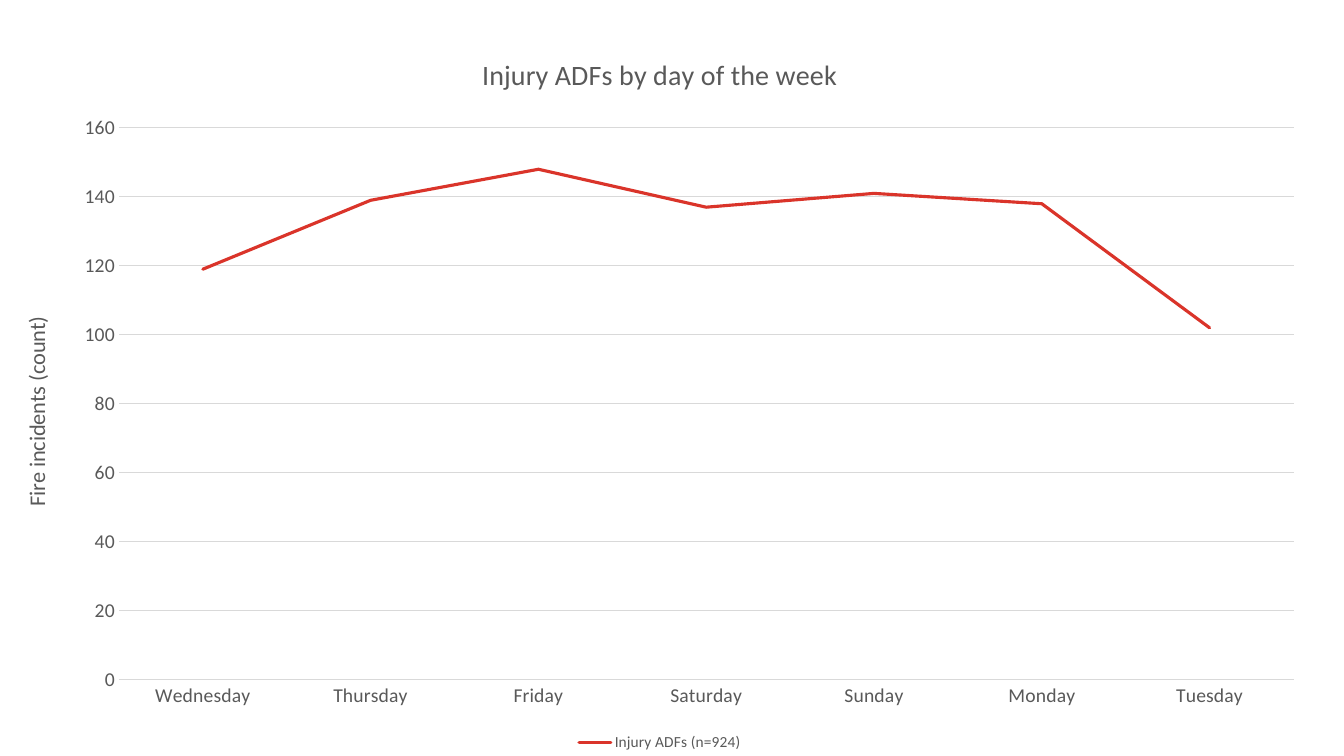
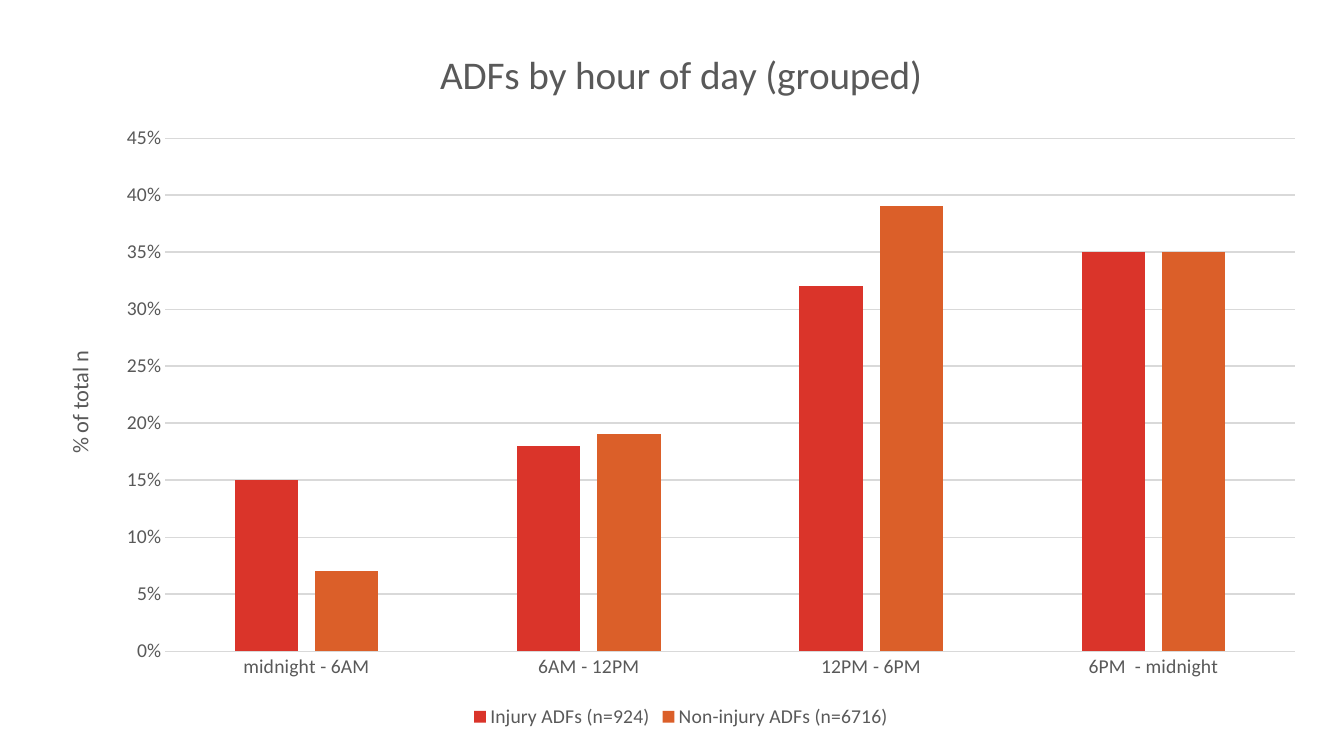
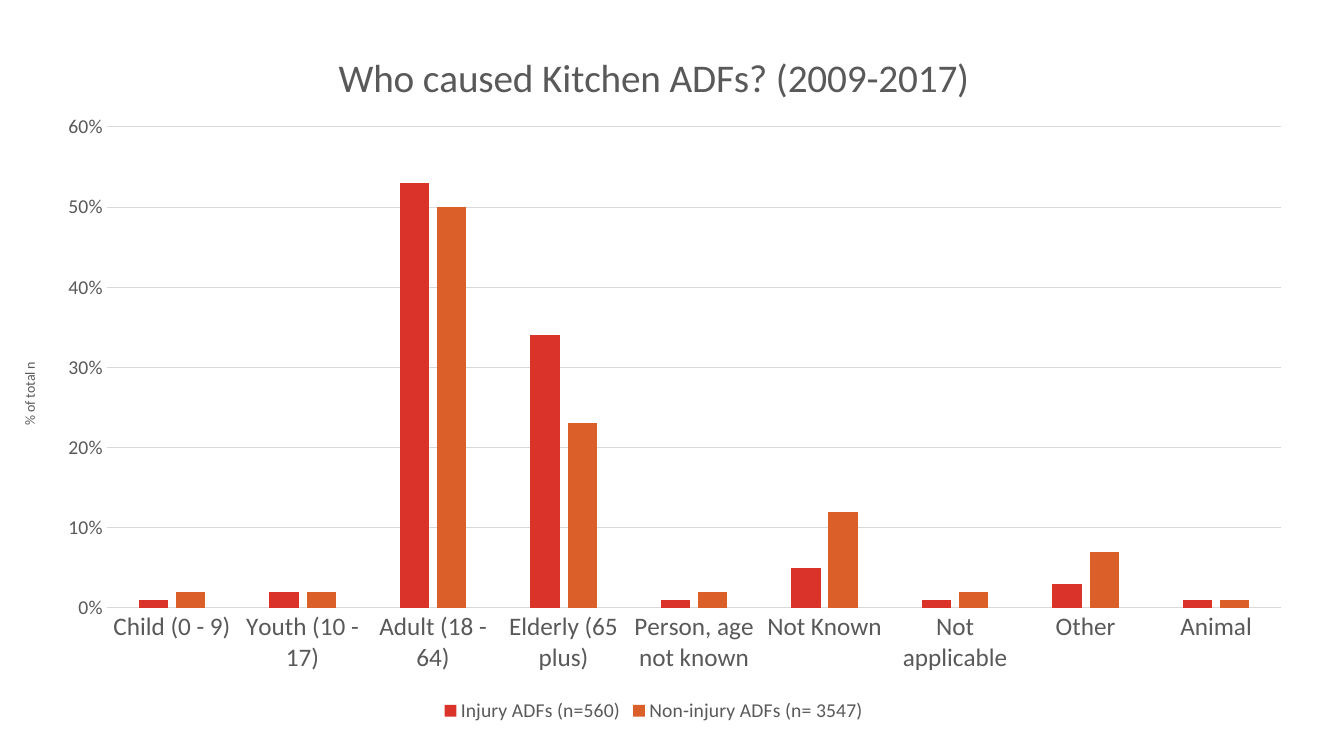
import pptx
import pptx.chart.data
import pptx.dml.color
import pptx.enum.chart
import pptx.oxml
import pptx.oxml.ns
import pptx.util

Inches, Pt = pptx.util.Inches, pptx.util.Pt
kinds = pptx.enum.chart.XL_CHART_TYPE

# Shared look
THEME = {
    "font": "Calibri",
    "text": "595959",
    "grid": "D9D9D9",
    "series": ["DA342A", "DB5F29"],
    "thin": 0.75,
    "thick": 2.25,
    "tick_size": 14,
}

# Content: "at" and "plot" are left, top, width, height in inches on the slide
CHARTS = [
    {
        "kind": kinds.LINE,
        "title": "Injury ADFs by day of the week",
        "value_title": "Fire incidents (count)",
        "categories": ["Wednesday", "Thursday", "Friday", "Saturday",
                       "Sunday", "Monday", "Tuesday"],
        "series": [("Injury ADFs (n=924)", [119, 139, 148, 137, 141, 138, 102])],
        "scale": (160, 20, "General"),
        "sizes": {"title": 20, "value_title": 16, "category": 14, "legend": 11},
        "at": (0, 0.3, 13.09, 7.2),
        "plot": (1.18, 1.27, 11.65, 5.47),
    },
    {
        "kind": kinds.COLUMN_CLUSTERED,
        "title": "ADFs by hour of day (grouped)",
        "value_title": "% of total n",
        "categories": ["midnight - 6AM", "6AM - 12PM", "12PM - 6PM", "6PM  - midnight"],
        "series": [("Injury ADFs (n=924)", [0.15, 0.18, 0.32, 0.35]),
                   ("Non-injury ADFs (n=6716)", [0.07, 0.19, 0.39, 0.35])],
        "scale": (0.45, 0.05, "0%"),
        "sizes": {"title": 28, "value_title": 16, "category": 14, "legend": 14},
        "at": (0.42, 0.21, 12.67, 7.06),
        "plot": (1.64, 1.37, 11.2, 5.09),
    },
    {
        "kind": kinds.COLUMN_CLUSTERED,
        "title": "Who caused Kitchen ADFs? (2009-2017)",
        "value_title": "% of total n",
        "categories": ["Child (0 - 9)", "Youth (10 - 17)", "Adult (18 - 64)",
                       "Elderly (65 plus)", "Person, age not known", "Not Known",
                       "Not applicable", "Other", "Animal"],
        "series": [("Injury ADFs (n=560)",
                    [0.01, 0.02, 0.53, 0.34, 0.01, 0.05, 0.01, 0.03, 0.01]),
                   ("Non-injury ADFs (n= 3547)",
                    [0.02, 0.02, 0.5, 0.23, 0.02, 0.12, 0.02, 0.07, 0.01])],
        "scale": (0.6, 0.1, "0%"),
        "sizes": {"title": 28, "value_title": 10, "category": 18, "legend": 14},
        "at": (0, 0.24, 12.97, 6.97),
        "plot": (1.06, 1.26, 11.65, 4.77),
    },
]


def rgb(value):
    return pptx.dml.color.RGBColor.from_string(value)


def apply(target, **values):
    for name, value in values.items():
        setattr(target, name, value)


def style_font(font, size):
    apply(font, name=THEME["font"], size=Pt(size), bold=False)
    font.color.rgb = rgb(THEME["text"])


def style_line(line, color, width):
    line.color.rgb = rgb(color)
    line.width = Pt(width)


def write_title(owner, text, size):
    frame = owner.text_frame
    frame.text = text
    style_font(frame.paragraphs[0].runs[0].font, size)


def place_plot(chart, at, plot):
    """Fix the inner plot area as fractions of the chart frame."""
    left, top, width, height = at
    fractions = {
        "x": (plot[0] - left) / width,
        "y": (plot[1] - top) / height,
        "w": plot[2] / width,
        "h": plot[3] / height,
    }
    modes = '<c:layoutTarget val="inner"/><c:xMode val="edge"/><c:yMode val="edge"/>'
    values = "".join(f'<c:{key} val="{value:.4f}"/>' for key, value in fractions.items())
    layout = pptx.oxml.parse_xml(
        f'<c:layout {pptx.oxml.ns.nsdecls("c")}><c:manualLayout>'
        f"{modes}{values}</c:manualLayout></c:layout>")
    area = chart.plots[0]._element.getparent()
    for old in area.findall(pptx.oxml.ns.qn("c:layout")):
        area.remove(old)
    area.insert(0, layout)


def style_axes(chart, content):
    sizes = content["sizes"]
    maximum, step, number_format = content["scale"]
    category, value = chart.category_axis, chart.value_axis
    for axis, size in ((category, sizes["category"]), (value, THEME["tick_size"])):
        apply(axis, major_tick_mark=pptx.enum.chart.XL_TICK_MARK.NONE,
              minor_tick_mark=pptx.enum.chart.XL_TICK_MARK.NONE)
        style_font(axis.tick_labels.font, size)
    style_line(category.format.line, THEME["grid"], THEME["thin"])

    apply(value, minimum_scale=0, maximum_scale=maximum, major_unit=step,
          has_major_gridlines=True)
    apply(value.tick_labels, number_format=number_format, number_format_is_linked=False)
    value.format.line.fill.background()
    style_line(value.major_gridlines.format.line, THEME["grid"], THEME["thin"])
    write_title(value.axis_title, content["value_title"], sizes["value_title"])


def style_series(chart, kind):
    plot = chart.plots[0]
    plot.vary_by_categories = False
    if kind == kinds.COLUMN_CLUSTERED:
        apply(plot, gap_width=219, overlap=-27)
    for series, color in zip(plot.series, THEME["series"]):
        if kind == kinds.LINE:
            series.smooth = False
            series.marker.style = pptx.enum.chart.XL_MARKER_STYLE.NONE
            style_line(series.format.line, color, THEME["thick"])
            series.format.line._ln.set("cap", "rnd")
        else:
            series.format.fill.solid()
            series.format.fill.fore_color.rgb = rgb(color)


def add_chart_page(deck, content):
    page = deck.slides.add_slide(deck.slide_layouts[6])
    data = pptx.chart.data.CategoryChartData(number_format=content["scale"][2])
    data.categories = content["categories"]
    for name, values in content["series"]:
        data.add_series(name, values)
    frame = [Inches(length) for length in content["at"]]
    chart = page.shapes.add_chart(content["kind"], *frame, data).chart

    # Title, legend and default text
    sizes = content["sizes"]
    style_font(chart.font, 10)
    chart.has_title = True
    write_title(chart.chart_title, content["title"], sizes["title"])
    chart.chart_title.include_in_layout = False
    chart.has_legend = True
    apply(chart.legend, position=pptx.enum.chart.XL_LEGEND_POSITION.BOTTOM,
          include_in_layout=False)
    style_font(chart.legend.font, sizes["legend"])

    style_axes(chart, content)
    style_series(chart, content["kind"])
    place_plot(chart, content["at"], content["plot"])


def main():
    deck = pptx.Presentation()
    apply(deck, slide_width=Inches(13.33), slide_height=Inches(7.5))
    for content in CHARTS:
        add_chart_page(deck, content)
    deck.save("out.pptx")


if __name__ == "__main__":
    main()
